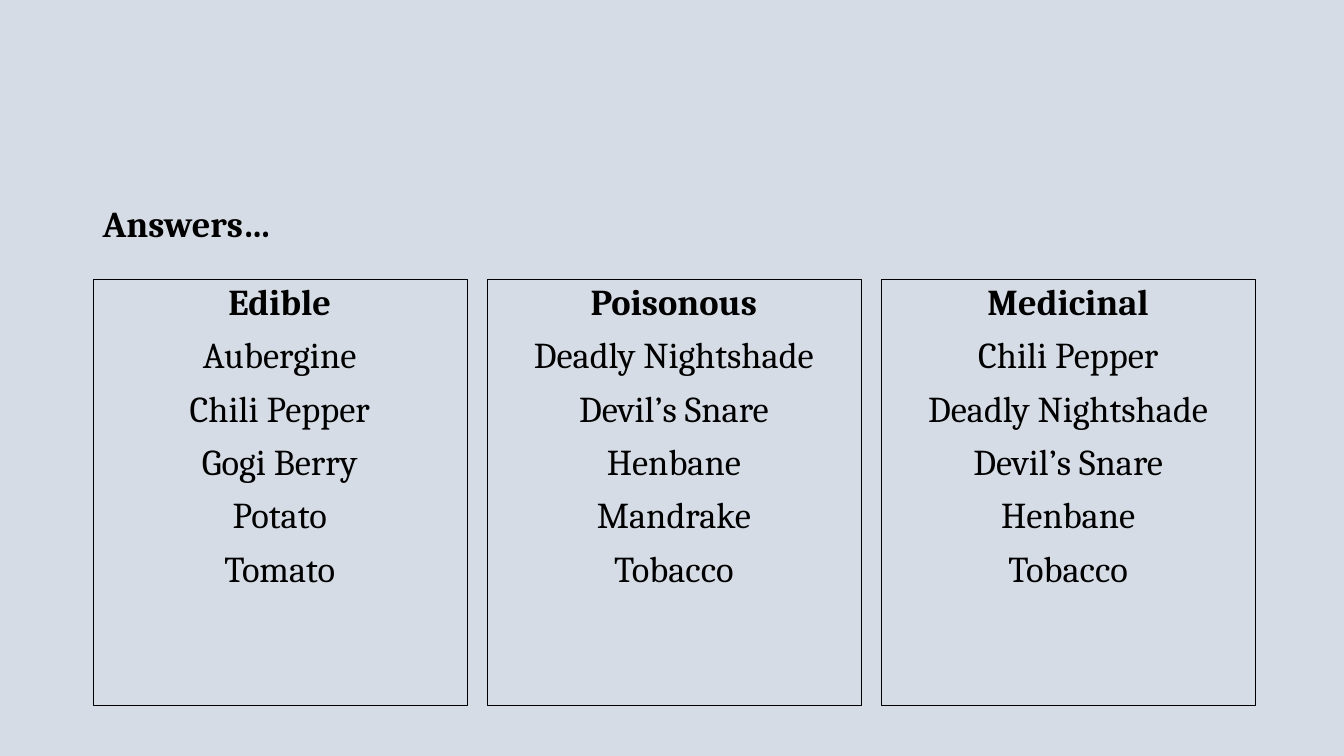
from pptx import Presentation, util as u
from pptx.dml.color import RGBColor
from pptx.enum import shapes, text

COLOURS = {"background": "D6DCE5", "ink": "000000"}
FONT, SIZE = "Cambria", 26
LEFT, COLUMN_STEP, COLUMN_WIDTH = 0.92, 3.91, 3.71
CARD_TOP, CARD_HEIGHT = 2.77, 4.23
ANSWERS = {
    "Edible": ["Aubergine", "Chili Pepper", "Gogi Berry", "Potato", "Tomato"],
    "Poisonous": ["Deadly Nightshade", "Devil’s Snare", "Henbane", "Mandrake", "Tobacco"],
    "Medicinal": ["Chili Pepper", "Deadly Nightshade", "Devil’s Snare", "Henbane", "Tobacco"],
}


def colour(name):
    return RGBColor.from_string(COLOURS[name])


class AnswerSlide:
    """Holds the text style and the slide being drawn."""

    def __init__(self, presentation):
        self.slide = presentation.slides.add_slide(presentation.slide_layouts[6])
        fill = self.slide.background.fill
        fill.solid()
        fill.fore_color.rgb = colour("background")

    def add_lines(self, shape, lines, alignment):
        """Fill a shape with one paragraph per line, the first in bold."""
        frame = shape.text_frame
        frame.word_wrap = True
        frame.vertical_anchor = text.MSO_ANCHOR.TOP
        for index, line in enumerate(lines):
            paragraph = frame.add_paragraph() if index else frame.paragraphs[0]
            paragraph.alignment = alignment
            paragraph.line_spacing = 0.9
            paragraph.space_before = u.Pt(10 if index else 0)
            run = paragraph.add_run()
            run.text = line
            run.font.name = FONT
            run.font.size = u.Pt(SIZE)
            run.font.bold = index == 0
            run.font.color.rgb = colour("ink")

    def heading(self, words):
        shape = self.slide.shapes.add_textbox(
            u.Inches(LEFT), u.Inches(2), u.Inches(3.23), u.Inches(0.52))
        self.add_lines(shape, [words], text.PP_ALIGN.LEFT)

    def card(self, column, title, plants):
        shape = self.slide.shapes.add_shape(
            shapes.MSO_SHAPE.RECTANGLE,
            u.Inches(LEFT + column * COLUMN_STEP), u.Inches(CARD_TOP),
            u.Inches(COLUMN_WIDTH), u.Inches(CARD_HEIGHT))
        shape.shadow.inherit = False
        shape.fill.background()
        shape.line.color.rgb = colour("ink")
        shape.line.width = u.Pt(0.25)
        self.add_lines(shape, [title, *plants], text.PP_ALIGN.CENTER)


def main():
    presentation = Presentation()
    presentation.slide_width = u.Inches(13.33)
    presentation.slide_height = u.Inches(7.5)
    answer_slide = AnswerSlide(presentation)
    for column, (title, plants) in enumerate(ANSWERS.items()):
        answer_slide.card(column, title, plants)
    answer_slide.heading("Answers…")
    presentation.save("out.pptx")


if __name__ == "__main__":
    main()
